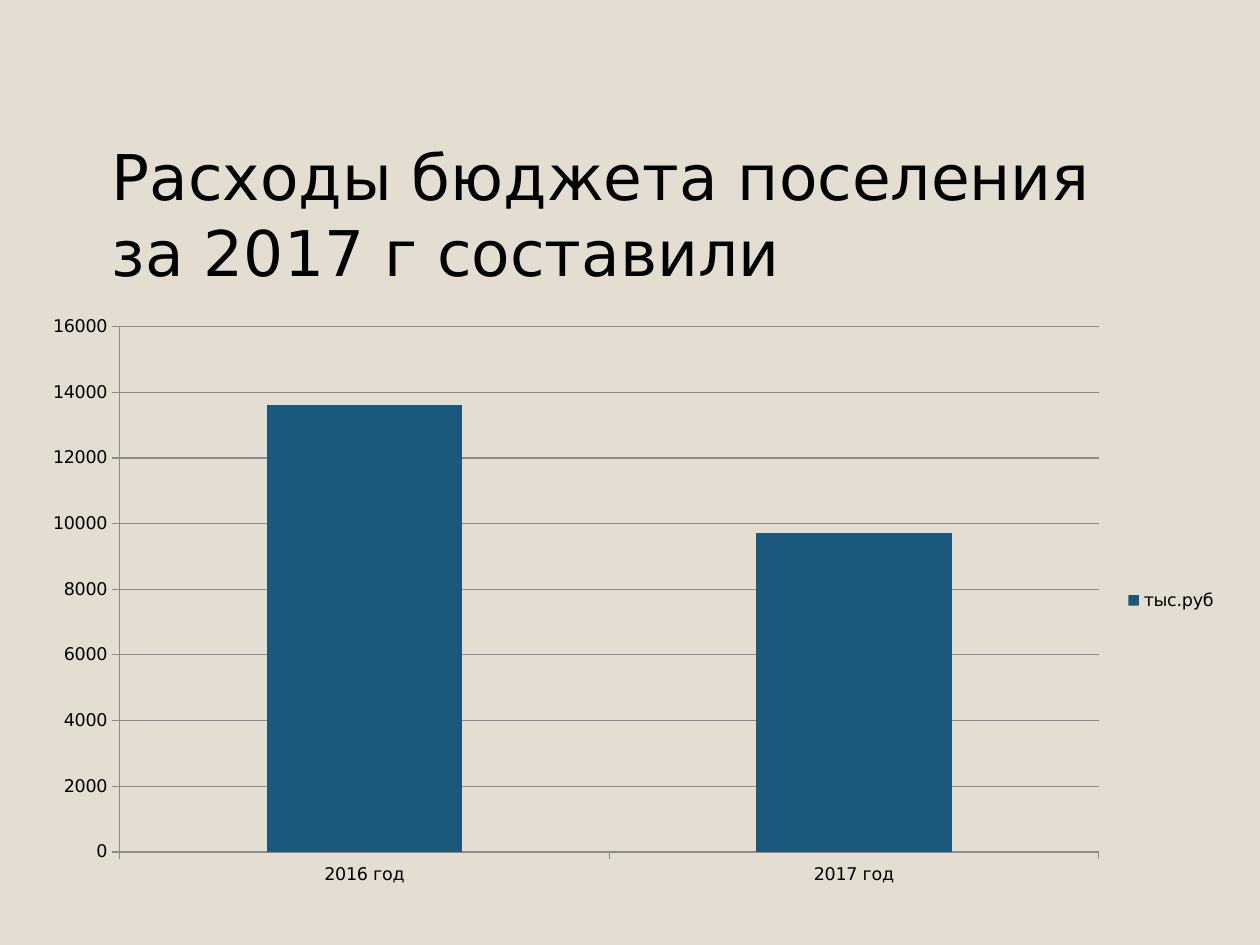
from pptx import Presentation
from pptx import util as u
from pptx.chart.data import CategoryChartData
from pptx.dml.color import RGBColor
from pptx.enum import chart as ch, text

FONT = "DejaVu Sans"
SAND = RGBColor(0xE3, 0xDE, 0xD1)
BLACK = RGBColor(0, 0, 0)
BLUE = RGBColor(0x1B, 0x58, 0x7C)
GRAY = RGBColor(0x8B, 0x8B, 0x8B)


def write(tf, content, *, size, color=BLACK, font=FONT):
    p = tf.paragraphs[0]
    r = p.add_run()
    r.text = content
    r.font.size, r.font.name = u.Pt(size), font
    r.font.color.rgb = color


class Slide:
    def __init__(self, prs):
        self.s = prs.slides.add_slide(prs.slide_layouts[6])
        self.s.background.fill.solid()
        self.s.background.fill.fore_color.rgb = SAND

    def title(self, content, x, y, w, h):
        sp = self.s.shapes.add_textbox(*map(u.Inches, (x, y, w, h)))
        tf = sp.text_frame
        tf.word_wrap = True
        tf.vertical_anchor = text.MSO_ANCHOR.MIDDLE
        tf.margin_bottom = 0
        write(tf, content, size=36)

    def columns(self, cats, name, values, x, y, w, h):
        data = CategoryChartData()
        data.categories = cats
        data.add_series(name, values)
        chart = self.s.shapes.add_chart(
            ch.XL_CHART_TYPE.COLUMN_STACKED,
            *map(u.Inches, (x, y, w, h)), data).chart
        chart.has_title = False
        chart.font.name, chart.font.size = FONT, u.Pt(10)
        chart.font.color.rgb = BLACK

        # Columns
        plot = chart.plots[0]
        plot.gap_width, plot.overlap = 150, 100
        plot.vary_by_categories = False
        fill = plot.series[0].format.fill
        fill.solid()
        fill.fore_color.rgb = BLUE

        # Axes and gridlines
        val = chart.value_axis
        val.minimum_scale, val.maximum_scale, val.major_unit = 0, 16000, 2000
        val.has_major_gridlines = True
        for axis in (chart.category_axis, val):
            axis.major_tick_mark = ch.XL_TICK_MARK.OUTSIDE
        for part in (chart.category_axis, val, val.major_gridlines):
            part.format.line.color.rgb = GRAY
            part.format.line.width = u.Pt(0.75)

        # Legend
        chart.has_legend = True
        chart.legend.position = ch.XL_LEGEND_POSITION.RIGHT
        chart.legend.include_in_layout = False


def main():
    prs = Presentation()
    prs.slide_width, prs.slide_height = u.Inches(10), u.Inches(7.5)
    s = Slide(prs)
    s.title("Расходы бюджета поселения за 2017 г составили",
            0.79, 1.09, 8.5, 1.16)
    s.columns(["2016 год", "2017 год"], "тыс.руб", [13600, 9700],
              0.23, 2.42, 9.53, 4.69)
    prs.save("out.pptx")


if __name__ == "__main__":
    main()
